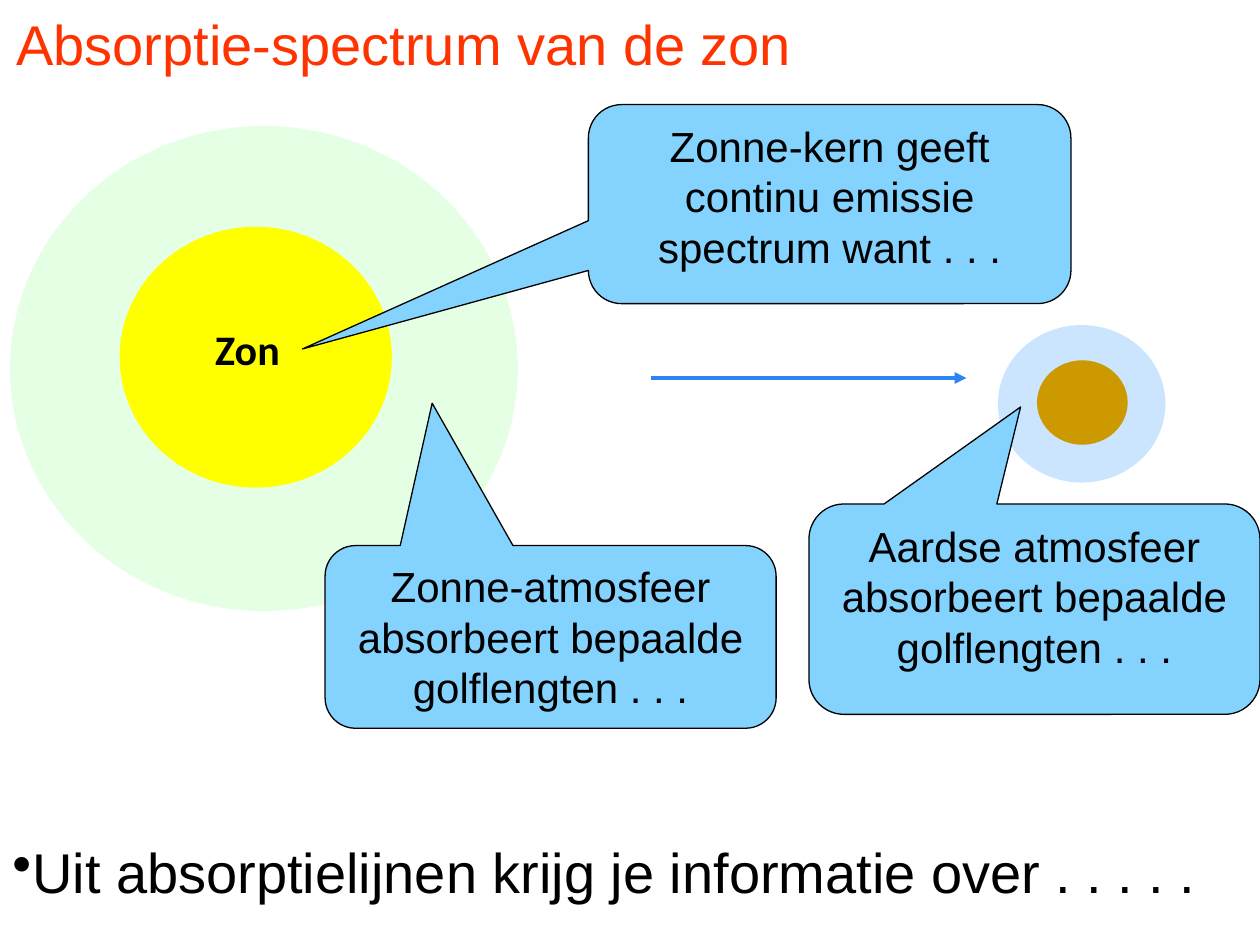
from lxml import etree
from pptx import Presentation
from pptx.dml.color import RGBColor
from pptx.enum.shapes import MSO_CONNECTOR, MSO_SHAPE
from pptx.enum.text import MSO_ANCHOR, PP_ALIGN
from pptx.oxml.ns import qn
from pptx.util import Inches, Pt

OVAL, CALLOUT = MSO_SHAPE.OVAL, MSO_SHAPE.ROUNDED_RECTANGULAR_CALLOUT
STRAIGHT = MSO_CONNECTOR.STRAIGHT
LEFT, CENTER = PP_ALIGN.LEFT, PP_ALIGN.CENTER
TOP, MIDDLE = MSO_ANCHOR.TOP, MSO_ANCHOR.MIDDLE

TITLE = "Absorptie-spectrum van de zon"
BULLET = "Uit absorptielijnen krijg je informatie over . . . . ."
EARTH = [((7.92, 2.58, 1.33, 1.25), "99CCFF", 50), ((8.23, 2.86, 0.72, 0.67), "CC9900", 100)]
SUN = [((0.08, 1, 4.03, 3.85), "CCFFCC", 50), ((0.95, 1.8, 2.16, 2.07), "FFFF00", 100)]
CORE = ((4.67, 0.83, 3.83, 1.58), (2.4, 2.77), "Zonne-kern geeft continu emissie spectrum want . . .")
SUN_AIR = ((2.58, 4.33, 3.58, 1.45), (3.43, 3.2), "Zonne-atmosfeer absorbeert bepaalde golflengten . . .")
EARTH_AIR = ((6.42, 4, 3.58, 1.67), (8.1, 3.23), "Aardse atmosfeer absorbeert bepaalde golflengten . . .")


def rgb(value):
    """Turn a hex string into a colour."""
    return RGBColor.from_string(value)


def inches(box):
    """Turn a tuple of numbers into lengths."""
    return [Inches(v) for v in box]


def write(tf, text, size, color="000000", font="Arial", align=LEFT, anchor=TOP, bold=False):
    """Write one formatted paragraph into a text frame."""
    tf.word_wrap, tf.vertical_anchor = True, anchor
    p = tf.paragraphs[0]
    p.alignment = align
    r = p.add_run()
    r.text = text
    r.font.size, r.font.name, r.font.bold = Pt(size), font, bold
    r.font.color.rgb = rgb(color)
    return p


def add_filled(shapes, kind, box, color):
    """Add a flat filled shape."""
    sp = shapes.add_shape(kind, *inches(box))
    sp.shadow.inherit = False
    sp.fill.solid()
    sp.fill.fore_color.rgb = rgb(color)
    return sp


def add_body(s, discs):
    """Add a group with an atmosphere and a core."""
    group = s.shapes.add_group_shape()
    for box, color, opacity in discs:
        sp = add_filled(group.shapes, OVAL, box, color)
        sp.line.fill.background()
        if opacity < 100:
            clr = sp._element.spPr.find(".//" + qn("a:srgbClr"))
            etree.SubElement(clr, qn("a:alpha"), val=str(opacity * 1000))
    return group


def add_callout(s, box, tip, text):
    """Add a callout whose tail ends at the tip."""
    sp = add_filled(s.shapes, CALLOUT, box, "83D3FE")
    sp.line.color.rgb, sp.line.width = rgb("000000"), Pt(0.75)
    x, y, w, h = box
    sp.adjustments[0] = (tip[0] - x) / w - 0.5
    sp.adjustments[1] = (tip[1] - y) / h - 0.5
    sp.adjustments[2] = 0.167
    write(sp.text_frame, text, 24, align=CENTER)


def add_arrow(s, start, end):
    """Add a blue arrow between two points."""
    cx = s.shapes.add_connector(STRAIGHT, *inches(start + end))
    cx.line.color.rgb, cx.line.width = rgb("2D82F4"), Pt(2.25)
    etree.SubElement(cx.line._get_or_add_ln(), qn("a:tailEnd"), type="triangle")
    etree.SubElement(cx._element.spPr, qn("a:effectLst"))


def main():
    """Build the slide and save it."""
    prs = Presentation()
    prs.slide_width, prs.slide_height = inches((10, 7.5))
    s = prs.slides.add_slide(prs.slide_layouts[5])
    title = s.shapes.title
    title.left, title.top, title.width, title.height = inches((0.03, 0.08, 9.97, 0.52))
    write(title.text_frame, TITLE, 32, "FF3300", anchor=MIDDLE)

    add_body(s, EARTH)
    sun = add_body(s, SUN)
    label = sun.shapes.add_textbox(*inches((1.61, 2.52, 0.83, 0.5)))
    write(label.text_frame, "Zon", 24, font="Calibri", bold=True)

    add_callout(s, *CORE)
    add_callout(s, *SUN_AIR)
    add_arrow(s, (5.17, 3), (7.67, 3))
    add_callout(s, *EARTH_AIR)

    tb = s.shapes.add_textbox(*inches((0, 6.33, 10, 1.17)))
    p = write(tb.text_frame, BULLET, 32, anchor=MIDDLE)
    etree.SubElement(p._p.get_or_add_pPr(), qn("a:buChar"), char="•")
    prs.save("out.pptx")


if __name__ == "__main__":
    main()
